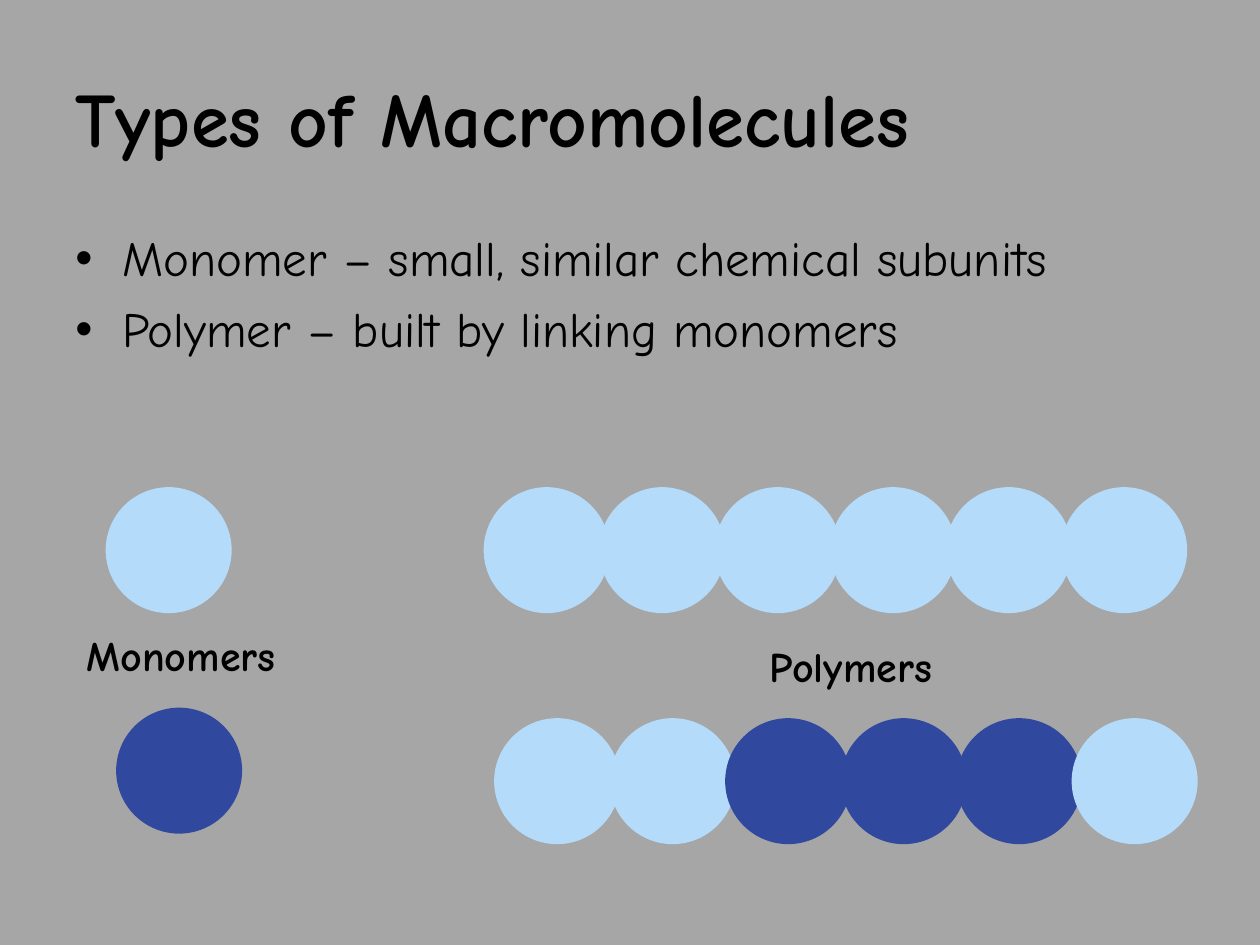
from pptx import Presentation
from pptx.dml.color import RGBColor
from pptx.enum.shapes import MSO_SHAPE as SHAPE
from pptx.enum.text import MSO_ANCHOR as ANCHOR
from pptx.oxml.ns import qn
from pptx.util import Pt
from lxml import etree

FONT = "Comic Neue"
BLACK, GREY, LIGHT, DARK = "000000", "A6A6A6", "B4DCFA", "31489F"
DIAMETER, STEP = 72, 66


def color(hex_code):
    return RGBColor.from_string(hex_code)


def add_text_frame(shapes, box, anchor=ANCHOR.TOP):
    tf = shapes.add_textbox(*map(Pt, box)).text_frame
    tf.word_wrap = True
    tf.vertical_anchor = anchor
    return tf


def add_run(p, text, size, bold=False):
    r = p.add_run()
    r.text = text
    r.font.name = FONT
    r.font.size = Pt(size)
    r.font.bold = bold
    r.font.color.rgb = color(BLACK)


def add_title(shapes, box, text):
    tf = add_text_frame(shapes, box, ANCHOR.MIDDLE)
    add_run(tf.paragraphs[0], text, 44, bold=True)


def add_bullets(shapes, box, lines):
    tf = add_text_frame(shapes, box)
    for i, line in enumerate(lines):
        p = tf.add_paragraph() if i else tf.paragraphs[0]
        p.space_before = Pt(7)
        pPr = p._p.get_or_add_pPr()
        pPr.set("marL", str(Pt(27)))
        pPr.set("indent", str(Pt(-27)))
        etree.SubElement(pPr, qn("a:buFont")).set("typeface", "Arial")
        etree.SubElement(pPr, qn("a:buChar")).set("char", "•")
        add_run(p, line, 28)


def add_chain(shapes, left, top, fills):
    """Draw overlapping circles from left to right, one for each fill."""
    for i, fill in enumerate(fills):
        sp = shapes.add_shape(SHAPE.OVAL, Pt(left + i * STEP), Pt(top),
                              Pt(DIAMETER), Pt(DIAMETER))
        sp.shadow.inherit = False
        sp.fill.solid()
        sp.fill.fore_color.rgb = color(fill)
        sp.line.fill.background()


def add_label(shapes, box, text):
    tf = add_text_frame(shapes, box)
    add_run(tf.paragraphs[0], text, 24, bold=True)


def add_diagram(shapes, left, top):
    """Draw monomers on the left and the polymers they form on the right."""
    polymer_left = left + 216
    add_chain(shapes, left, top, [LIGHT])
    add_chain(shapes, polymer_left, top, [LIGHT] * 6)
    add_label(shapes, (left - 18, top + 78, 162, 36), "Monomers")
    add_label(shapes, (left + 372, top + 84, 174, 36), "Polymers")
    add_chain(shapes, left + 6, top + 126, [DARK])
    add_chain(shapes, polymer_left + 6, top + 132,
              [LIGHT] * 2 + [DARK] * 3 + [LIGHT])


def main():
    prs = Presentation()
    prs.slide_width, prs.slide_height = Pt(720), Pt(540)
    s = prs.slides.add_slide(prs.slide_layouts[6])
    s.background.fill.solid()
    s.background.fill.fore_color.rgb = color(GREY)
    add_title(s.shapes, (36, 21.6, 648, 90), "Types of Macromolecules")
    add_bullets(s.shapes, (36, 126.6, 648, 106.6), [
        "Monomer – small, similar chemical subunits",
        "Polymer – built by linking monomers",
    ])
    add_diagram(s.shapes.add_group_shape().shapes, 60.4, 278.4)
    prs.save("out.pptx")


if __name__ == "__main__":
    main()
